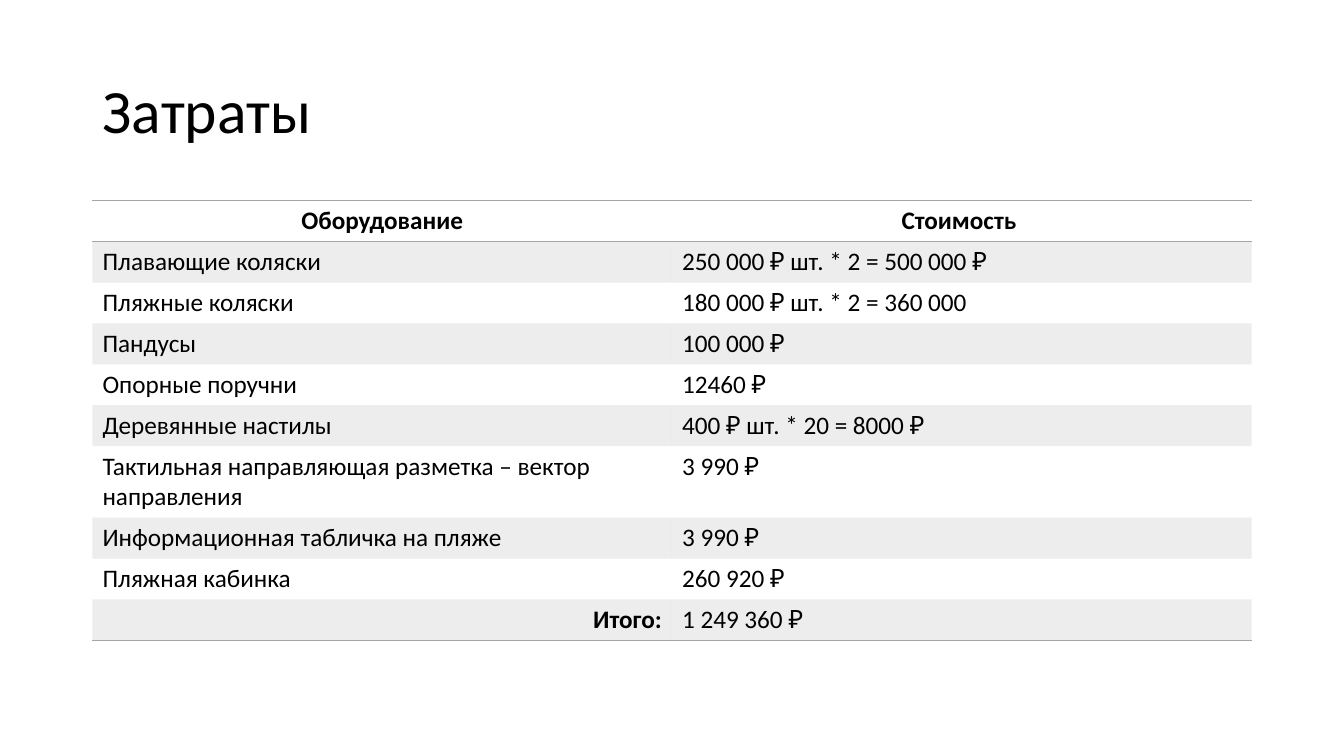
import lxml.etree
import pptx
import pptx.dml.color
import pptx.enum.text
import pptx.oxml.ns
import pptx.util

Cm = pptx.util.Cm
Pt = pptx.util.Pt
ALIGN = pptx.enum.text.PP_ALIGN
BLACK = pptx.dml.color.RGBColor(0x00, 0x00, 0x00)
GRAY = pptx.dml.color.RGBColor(0xA5, 0xA5, 0xA5)
FONT = "Calibri"
NO_STYLE_NO_GRID = "{2D5ABB26-0587-4C30-8999-92F81FD0307C}"
ROW_HEIGHT = 1.03

COSTS = [
    ("Оборудование", "Стоимость "),
    ("Плавающие коляски", "250 000 ₽ шт. * 2 = 500 000 ₽"),
    ("Пляжные коляски", "180 000 ₽ шт. * 2 = 360 000"),
    ("Пандусы", "100 000 ₽"),
    ("Опорные поручни", "12460 ₽"),
    ("Деревянные настилы", "400 ₽ шт. * 20 = 8000 ₽"),
    ("Тактильная направляющая разметка – вектор направления", "3 990 ₽"),
    ("Информационная табличка на пляже", "3 990 ₽"),
    ("Пляжная кабинка", "260 920 ₽"),
    ("Итого:", "1 249 360 ₽"),
]


def add_run(p, text, size, bold=False):
    r = p.add_run()
    r.text = text
    r.font.name = FONT
    r.font.size = Pt(size)
    r.font.bold = bold
    r.font.color.rgb = BLACK


def add_child(parent, tag, **attrs):
    return lxml.etree.SubElement(parent, pptx.oxml.ns.qn(tag), attrs)


def add_border(cell, tag):
    """Add a gray 1 pt cell border; call before filling the cell."""
    ln = add_child(cell._tc.get_or_add_tcPr(), tag, w=str(Pt(1)))
    add_child(add_child(ln, "a:solidFill"), "a:srgbClr", val=str(GRAY))


def fill_band(cell):
    cell.fill.solid()
    cell.fill.fore_color.rgb = GRAY
    color = cell._tc.tcPr.find(".//" + pptx.oxml.ns.qn("a:solidFill") + "[last()]/")
    for color in cell._tc.tcPr.findall(pptx.oxml.ns.qn("a:solidFill") + "/*"):
        add_child(color, "a:alpha", val="20000")


def place_title(slide, text, left, top, width, height):
    sp = slide.shapes.title
    sp.left, sp.top, sp.width, sp.height = Cm(left), Cm(top), Cm(width), Cm(height)
    tf = sp.text_frame
    tf.vertical_anchor = pptx.enum.text.MSO_ANCHOR.MIDDLE
    p = tf.paragraphs[0]
    p.alignment = ALIGN.LEFT
    p.line_spacing = 0.9
    add_run(p, text, 44)


def add_cost_table(slide, rows, left, top, width):
    frame = slide.shapes.add_table(len(rows), len(rows[0]), Cm(left), Cm(top),
                                   Cm(width), Cm(ROW_HEIGHT * len(rows)))
    table = frame.table
    table.horz_banding = False
    table._tbl.tblPr.find(pptx.oxml.ns.qn("a:tableStyleId")).text = NO_STYLE_NO_GRID
    last = len(rows) - 1
    for i, row in enumerate(rows):
        for j, text in enumerate(row):
            cell = table.cell(i, j)
            is_total_label = i == last and j == 0
            p = cell.text_frame.paragraphs[0]
            if i == 0:
                p.alignment = ALIGN.CENTER
            elif is_total_label:
                p.alignment = ALIGN.RIGHT
            add_run(p, text, 18, bold=i == 0 or is_total_label)
            if i == 0:
                add_border(cell, "a:lnT")
            if i in (0, last):
                add_border(cell, "a:lnB")
            if i % 2:
                fill_band(cell)
            else:
                cell.fill.background()


def main():
    prs = pptx.Presentation()
    prs.slide_width, prs.slide_height = Cm(33.87), Cm(19.05)
    slide = prs.slides.add_slide(prs.slide_layouts[5])
    place_title(slide, "Затраты", 2.33, 1.01, 29.21, 3.68)
    add_cost_table(slide, COSTS, 2.33, 5.06, 29.21)
    prs.save("out.pptx")


if __name__ == "__main__":
    main()
